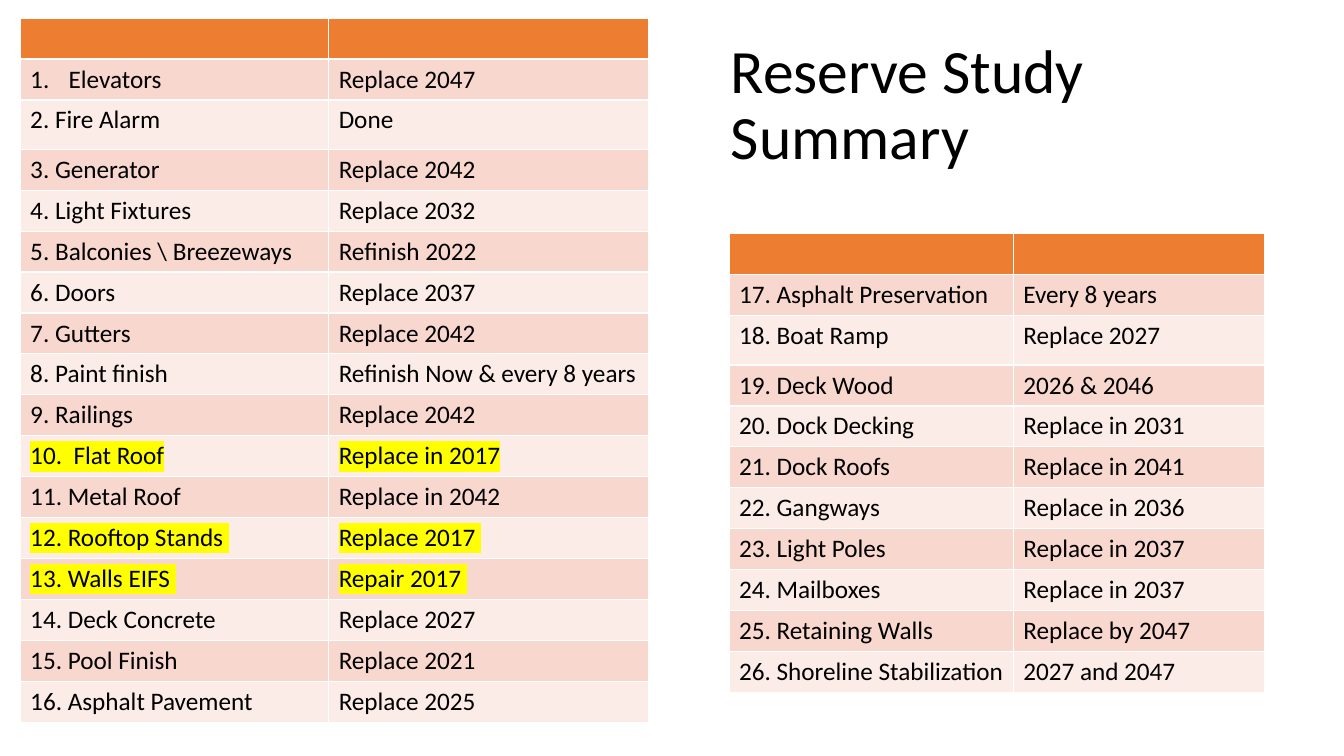
import lxml.etree
import pptx
import pptx.dml.color
import pptx.enum.text
import pptx.oxml.ns
import pptx.util

Inches = pptx.util.Inches
Pt = pptx.util.Pt
qn = pptx.oxml.ns.qn

COLORS = {
    "header": "ED7D31",
    "odd": "F8D7CE",
    "even": "FCECE8",
    "text": "000000",
    "highlight": "FFFF00",
}
HEADER_HEIGHT, TALL_HEIGHT, ROW_HEIGHT = Inches(0.39), Inches(0.49), Inches(6.09 / 15)
TALL_ROW = 2
URGENT = ("10.", "12.", "13.")

BUILDING_ITEMS = [
    ("Elevators", "Replace 2047"),
    ("2. Fire Alarm", "Done"),
    ("3. Generator", "Replace 2042"),
    ("4. Light Fixtures", "Replace 2032"),
    ("5. Balconies \\ Breezeways", "Refinish 2022"),
    ("6. Doors", "Replace 2037"),
    ("7. Gutters", "Replace 2042"),
    ("8. Paint finish", "Refinish Now & every 8 years"),
    ("9. Railings", "Replace 2042"),
    ("10.  Flat Roof", "Replace in 2017"),
    ("11. Metal Roof", "Replace in 2042"),
    ("12. Rooftop Stands ", "Replace 2017 "),
    ("13. Walls EIFS ", "Repair 2017 "),
    ("14. Deck Concrete", "Replace 2027"),
    ("15. Pool Finish", "Replace 2021"),
    ("16. Asphalt Pavement", "Replace 2025"),
]
GROUNDS_ITEMS = [
    ("17. Asphalt Preservation", "Every 8 years"),
    ("18. Boat Ramp", "Replace 2027"),
    ("19. Deck Wood", "2026 & 2046"),
    ("20. Dock Decking", "Replace in 2031"),
    ("21. Dock Roofs", "Replace in 2041"),
    ("22. Gangways", "Replace in 2036"),
    ("23. Light Poles", "Replace in 2037"),
    ("24. Mailboxes", "Replace in 2037"),
    ("25. Retaining Walls", "Replace by 2047"),
    ("26. Shoreline Stabilization", "2027 and 2047"),
]


def set_font(target, size):
    target.font.name = "Calibri"
    target.font.size = Pt(size)
    target.font.color.rgb = pptx.dml.color.RGBColor.from_string(COLORS["text"])


def add_schedule(page, items, left, top, widths):
    """Add a two-column table with an empty header and banded rows."""
    rows = [("", "")] + items
    heights = [HEADER_HEIGHT] + [ROW_HEIGHT] * len(items)
    heights[TALL_ROW] = TALL_HEIGHT
    table = page.shapes.add_table(
        len(rows), 2, Inches(left), Inches(top), Inches(sum(widths)), sum(heights)
    ).table
    for column, width in zip(table.columns, widths):
        column.width = Inches(width)
    for index, (texts, height) in enumerate(zip(rows, heights)):
        table.rows[index].height = height
        band = "header" if index == 0 else "odd" if index % 2 else "even"
        for cell, text in zip(table.rows[index].cells, texts):
            cell.fill.solid()
            cell.fill.fore_color.rgb = pptx.dml.color.RGBColor.from_string(COLORS[band])
            para = cell.text_frame.paragraphs[0]
            set_font(para, 18)
            if not text:
                continue
            span = para.add_run()
            span.text = text
            set_font(span, 18)
            if texts[0].startswith(URGENT):
                highlight = lxml.etree.Element(qn("a:highlight"))
                color = lxml.etree.SubElement(highlight, qn("a:srgbClr"))
                color.set("val", COLORS["highlight"])
                span.font._element.find(qn("a:solidFill")).addnext(highlight)
    return table


deck = pptx.Presentation()
deck.slide_width, deck.slide_height = Inches(13.33), Inches(7.5)
page = deck.slides.add_slide(deck.slide_layouts[6])

building = add_schedule(page, BUILDING_ITEMS, 0.2, 0.18, (3.06, 3.17))
add_schedule(page, GROUNDS_ITEMS, 7.23, 2.32, (2.82, 2.49))

# The first item is numbered automatically
properties = building.cell(1, 0).text_frame.paragraphs[0]._p.get_or_add_pPr()
properties.set("marL", str(Inches(0.38)))
properties.set("indent", str(-Inches(0.38)))
numbering = lxml.etree.Element(qn("a:buAutoNum"), type="arabicPeriod")
properties.insert(0, numbering)

title = page.shapes.add_textbox(Inches(7.15), Inches(0.33), Inches(6.11), Inches(1.45))
title.text_frame.word_wrap = True
title.text_frame.vertical_anchor = pptx.enum.text.MSO_ANCHOR.MIDDLE
para = title.text_frame.paragraphs[0]
para.line_spacing = 0.9
span = para.add_run()
span.text = "Reserve Study Summary"
set_font(span, 44)

deck.save("out.pptx")
